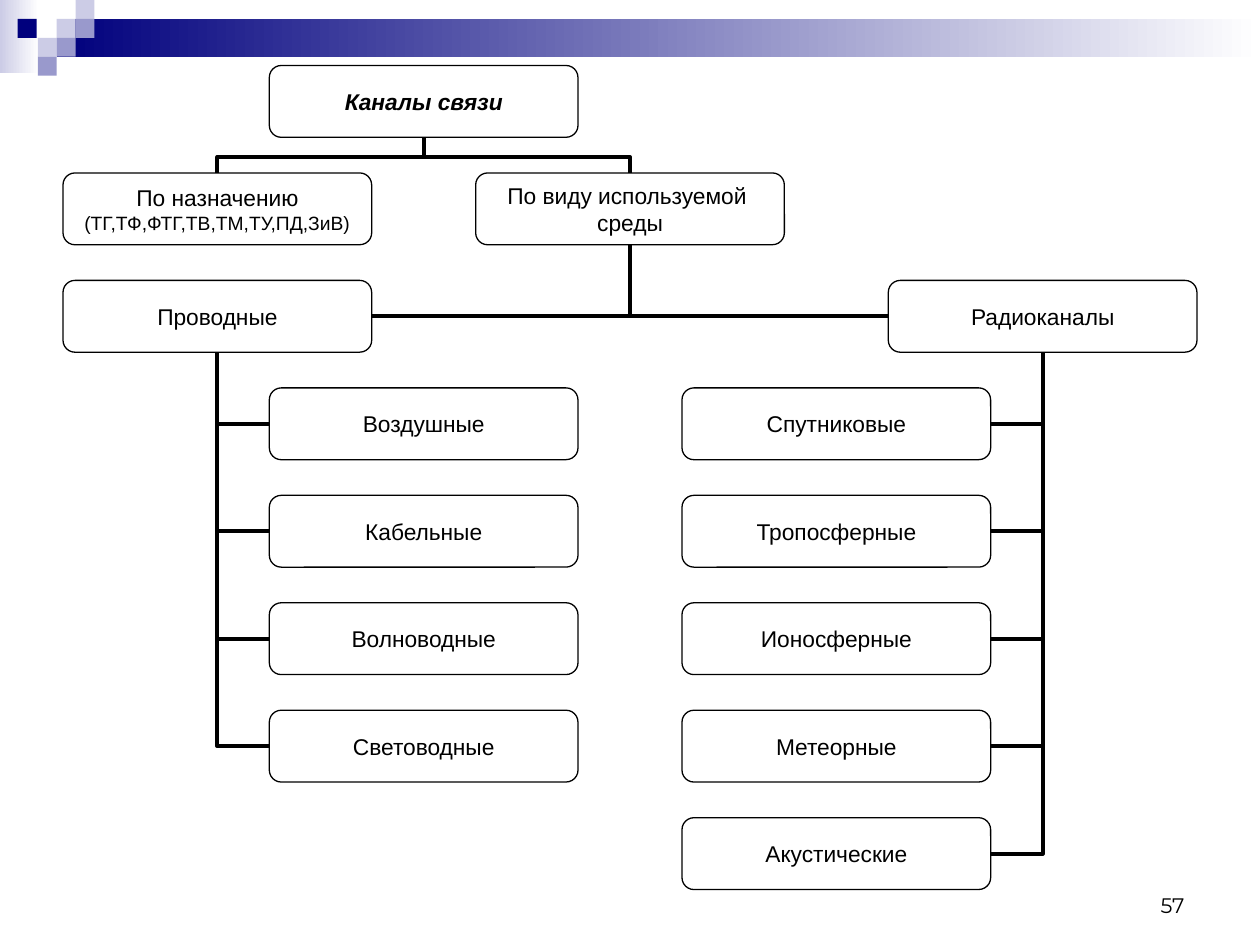
from lxml import etree
from pptx import Presentation
from pptx.dml.color import RGBColor
from pptx.enum import shapes, text
from pptx.oxml import ns
from pptx.util import Inches, Pt

INK = {"navy": "00007D", "mid": "9999CC", "pale": "CCCCE6",
       "white": "FFFFFF", "black": "000000"}

# Grid of boxes: five columns, eight rows
LEFT, TOP = 0.5, 0.52
COL, ROW = (7.05 - LEFT) / 4, (6.49 - TOP) / 7
WIDE, HIGH = 2.45, 0.57

WIRED = ["Воздушные", "Кабельные", "Волноводные", "Световодные"]
RADIO = ["Спутниковые", "Тропосферные", "Ионосферные", "Метеорные",
         "Акустические"]
TILES = [(0.45, 0.15, "pale"), (0.6, 0, "pale"), (0.6, 0.15, "mid"),
         (0.3, 0.3, "pale"), (0.14, 0.15, "navy"), (0.45, 0.3, "mid"),
         (0.3, 0.45, "mid")]


def paint(name):
    return RGBColor.from_string(INK[name])


def write(frame, lines, sizes=(13,), font="Arial", align="CENTER",
          bold=False, italic=False):
    """Fill a text frame with one paragraph per line."""
    for i, line in enumerate(lines):
        para = frame.paragraphs[0] if i == 0 else frame.add_paragraph()
        para.alignment = getattr(text.PP_ALIGN, align)
        run = para.add_run()
        run.text = line
        run.font.name = font
        run.font.size = Pt(sizes[min(i, len(sizes) - 1)])
        run.font.bold, run.font.italic = bold, italic
        run.font.color.rgb = paint("black")


def block(slide, x, y, w, h, *tones):
    """Plain rectangle, solid or fading between two tones."""
    rect = slide.shapes.add_shape(
        shapes.MSO_SHAPE.RECTANGLE, Inches(x), Inches(y), Inches(w), Inches(h))
    rect.shadow.inherit = False
    rect.line.fill.background()
    if len(tones) == 1:
        rect.fill.solid()
        rect.fill.fore_color.rgb = paint(tones[0])
    else:
        rect.fill.gradient()
        rect.fill.gradient_angle = 0
        for stop, tone in zip(rect.fill.gradient_stops, tones):
            stop.color.rgb = paint(tone)


def node(slide, col, row, *lines, **style):
    """Rounded box at a grid place."""
    box = slide.shapes.add_shape(
        shapes.MSO_SHAPE.ROUNDED_RECTANGLE, Inches(LEFT + col * COL),
        Inches(TOP + row * ROW), Inches(WIDE), Inches(HIGH))
    box.shadow.inherit = False
    box.fill.background()
    box.line.color.rgb = paint("black")
    box.line.width = Pt(0.75)
    frame = box.text_frame
    frame.margin_left = frame.margin_right = 0
    frame.margin_top = frame.margin_bottom = 0
    frame.word_wrap = False
    frame.vertical_anchor = text.MSO_ANCHOR.MIDDLE
    write(frame, lines, **style)
    return box


def side(box, site):
    """Middle of a box side: 0 top, 1 left, 2 bottom, 3 right."""
    x, y = box.left + box.width // 2, box.top + box.height // 2
    return [(x, box.top), (box.left, y), (x, box.top + box.height),
            (box.left + box.width, y)][site]


def elbow(slide, start, end):
    """Bent line between two points."""
    line = slide.shapes.add_connector(
        shapes.MSO_CONNECTOR.ELBOW, *start, *end)
    line.line.color.rgb = paint("black")
    line.line.width = Pt(2.25)
    etree.SubElement(line.element.spPr, ns.qn("a:effectLst"))
    return line.element.spPr


def branch(slide, owner, kids, site):
    """One-corner line from each child to the owner's bottom."""
    for kid in reversed(kids):
        props = elbow(slide, side(kid, site), side(owner, 2))
        props.find(ns.qn("a:prstGeom")).set("prst", "bentConnector2")


def drop(slide, owner, kid):
    """Two-corner line from a child's top up to the owner's bottom."""
    (x1, y1), (x2, y2) = side(kid, 0), side(owner, 2)
    # The frame is upright and turned a quarter about its centre
    mid_x, mid_y = (x1 + x2) // 2, (y1 + y2) // 2
    half_w, half_h = abs(y1 - y2) // 2, abs(x1 - x2) // 2
    right = x1 > x2
    flip = 1 if right else -1
    props = elbow(slide, (mid_x + flip * half_w, mid_y - half_h),
                  (mid_x - flip * half_w, mid_y + half_h))
    turn = 90 if right else 270
    props.find(ns.qn("a:xfrm")).set("rot", str(turn * 60000))
    geom = props.find(ns.qn("a:prstGeom"))
    guides = geom.find(ns.qn("a:avLst"))
    if guides is None:
        guides = etree.SubElement(geom, ns.qn("a:avLst"))
    etree.SubElement(guides, ns.qn("a:gd"), name="adj1", fmla="val 45000")


def main():
    deck = Presentation()
    deck.slide_width, deck.slide_height = Inches(10), Inches(7.5)
    slide = deck.slides.add_slide(deck.slide_layouts[6])

    # Header band and tiles
    block(slide, 0, 0, 0.31, 0.58, "pale", "white")
    block(slide, 0.45, 0.15, 9.55, 0.3, "navy", "white")
    for x, y, tone in TILES:
        block(slide, x, y, 0.15, 0.15, tone)

    # Boxes
    root = node(slide, 1, 0, "Каналы связи", bold=True, italic=True)
    use = node(slide, 0, 1, "По назначению", "(ТГ,ТФ,ФТГ,ТВ,ТМ,ТУ,ПД,ЗиВ)",
               sizes=(13, 11))
    media = node(slide, 2, 1, "По виду используемой ", "среды")
    wired = node(slide, 0, 2, "Проводные")
    radio = node(slide, 4, 2, "Радиоканалы")
    cables = [node(slide, 1, 3 + i, name) for i, name in enumerate(WIRED)]
    waves = [node(slide, 3, 3 + i, name) for i, name in enumerate(RADIO)]

    # Lines
    branch(slide, radio, waves, 3)
    branch(slide, wired, cables, 1)
    branch(slide, media, [radio], 1)
    branch(slide, media, [wired], 3)
    drop(slide, root, media)
    drop(slide, root, use)

    # Page number
    page = slide.shapes.add_textbox(
        Inches(7.17), Inches(6.83), Inches(2.33), Inches(0.5)).text_frame
    page.word_wrap = True
    page.vertical_anchor = text.MSO_ANCHOR.BOTTOM
    write(page, ["57"], sizes=(12,), font="Montserrat", align="RIGHT")

    deck.save("out.pptx")


if __name__ == "__main__":
    main()
